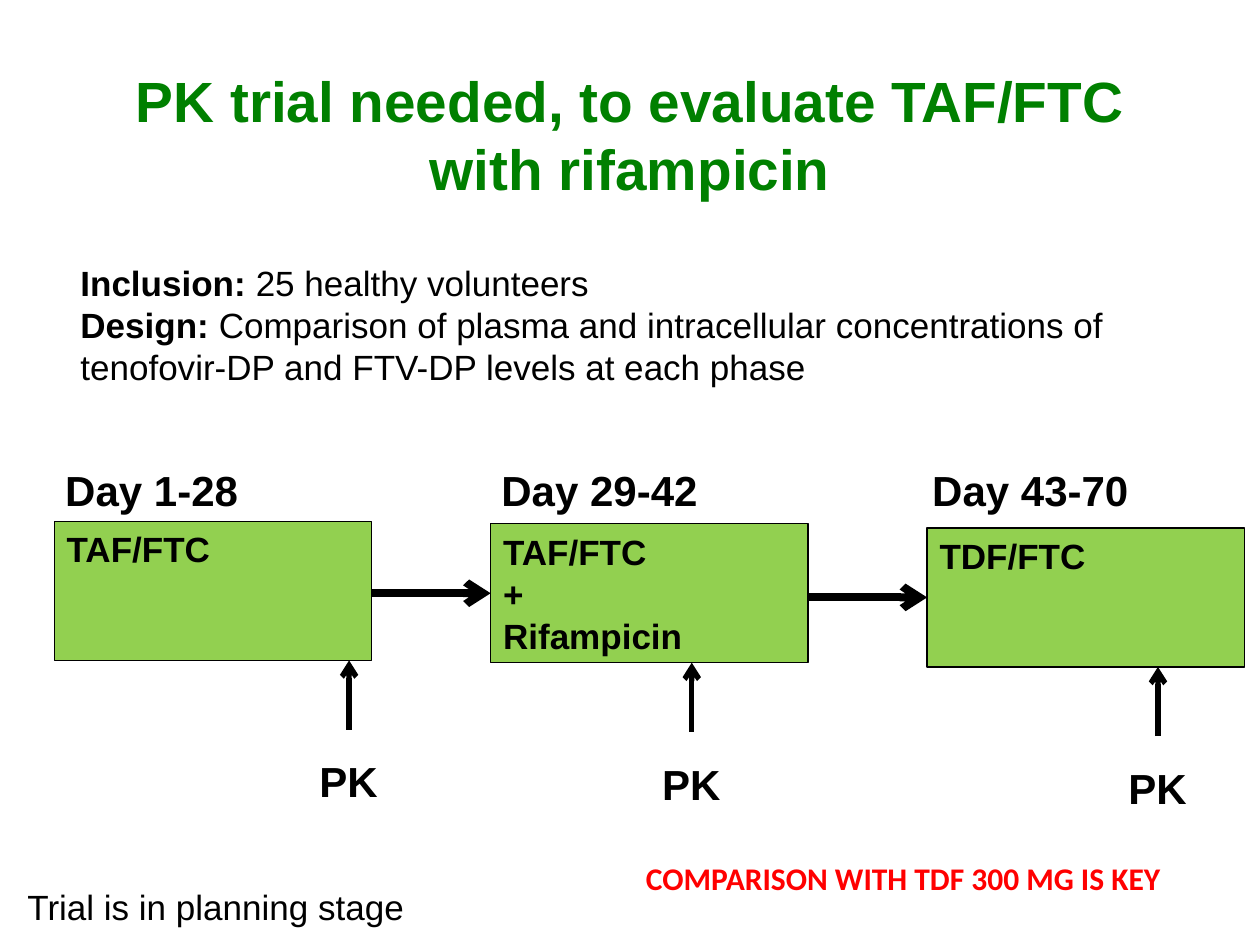
from pptx import Presentation
from pptx.dml.color import RGBColor
from pptx.enum.shapes import MSO_CONNECTOR, MSO_SHAPE
from pptx.enum.text import MSO_ANCHOR, PP_ALIGN
from pptx.oxml.ns import qn
from pptx.util import Pt
from lxml import etree

BLACK = RGBColor(0x00, 0x00, 0x00)
TITLE_GREEN = RGBColor(0x00, 0x80, 0x00)
BOX_GREEN = RGBColor(0x92, 0xD0, 0x50)
RED = RGBColor(0xFF, 0x00, 0x00)
LEFT, CENTER = PP_ALIGN.LEFT, PP_ALIGN.CENTER
TOP, MIDDLE = MSO_ANCHOR.TOP, MSO_ANCHOR.MIDDLE
RECT, STRAIGHT = MSO_SHAPE.RECTANGLE, MSO_CONNECTOR.STRAIGHT

# Phases: day label, label left, box top, treatment lines, PK sampling x
PHASES = [
    ("Day 1-28", 30.2, 298, ["TAF/FTC"], 199.5),
    ("Day 29-42", 279.4, 299.3, ["TAF/FTC", "+", "Rifampicin"], 395.3),
    ("Day 43-70", 525.6, 301.7, ["TDF/FTC"], 661.7),
]
BOX_W, BOX_H, PITCH = 181.4, 79.4, 249.4


def write(sp, paragraphs, size=20, font="Arial", color=BLACK, bold=False,
          align=LEFT, anchor=TOP, wrap=True):
    """Fill a shape; a paragraph is a string or a list of (text, bold) runs."""
    tf = sp.text_frame
    tf.word_wrap = wrap
    tf.vertical_anchor = anchor
    for i, runs in enumerate(paragraphs):
        p = tf.paragraphs[0] if i == 0 else tf.add_paragraph()
        p.alignment = align
        for text, is_bold in [(runs, bold)] if isinstance(runs, str) else runs:
            r = p.add_run()
            r.text = text
            r.font.size, r.font.name = Pt(size), font
            r.font.bold = is_bold
            r.font.color.rgb = color


def add_text(s, box, paragraphs, **fmt):
    sp = s.shapes.add_textbox(*map(Pt, box))
    write(sp, paragraphs, **fmt)


def add_arrow(s, x1, y1, x2, y2, width):
    cn = s.shapes.add_connector(STRAIGHT, Pt(x1), Pt(y1), Pt(x2), Pt(y2))
    cn.line.color.rgb = BLACK
    cn.line.width = Pt(width)
    etree.SubElement(cn.line._get_or_add_ln(), qn("a:tailEnd"), type="arrow")
    etree.SubElement(cn._element.spPr, qn("a:effectLst"))


def add_phase(s, box, day, day_left, drugs, pk_x):
    x, y, w, h = box
    # Treatment box under its day label
    sp = s.shapes.add_shape(RECT, *map(Pt, box))
    sp.shadow.inherit = False
    sp.fill.solid()
    sp.fill.fore_color.rgb = BOX_GREEN
    sp.line.color.rgb = BLACK
    sp.line.width = Pt(0.75)
    write(sp, drugs, bold=True)
    add_text(s, (day_left, 262, 178.6, 36), [day], size=24, bold=True)
    # PK sampling point
    bottom = y + h
    add_arrow(s, pk_x, bottom + 39.6, pk_x, bottom, 3)
    add_text(s, (pk_x - 24, bottom + 51, 48.2, 36), ["PK"],
             size=24, bold=True, wrap=False)


def add_timeline(s, left):
    for i, (day, day_left, top, drugs, pk_x) in enumerate(PHASES):
        x = left + i * PITCH
        add_phase(s, (x, top, BOX_W, BOX_H), day, day_left, drugs, pk_x)
        if i < len(PHASES) - 1:
            y = PHASES[i + 1][2] + BOX_H / 2
            add_arrow(s, x + BOX_W, y, x + PITCH, y, 4.5)


def main():
    prs = Presentation()
    prs.slide_width, prs.slide_height = Pt(720), Pt(540)
    s = prs.slides.add_slide(prs.slide_layouts[6])

    # Title
    add_text(s, (54, 31.7, 612, 90),
             ["PK trial needed, to evaluate TAF/FTC with rifampicin"],
             size=32.4, color=TITLE_GREEN, bold=True, align=CENTER,
             anchor=MIDDLE)

    # Trial outline
    add_text(s, (38.9, 146, 609, 80), [
        [("Inclusion: ", True), ("25 healthy volunteers", False)],
        [("Design: ", True),
         ("Comparison of plasma and intracellular concentrations of", False)],
        "tenofovir-DP and FTV-DP levels at each phase",
    ], wrap=False)

    add_timeline(s, 31)

    # Closing remarks
    add_text(s, (8.6, 502.6, 237, 31.5), ["Trial is in planning stage"],
             wrap=False)
    add_text(s, (362, 487.4, 312, 29), ["COMPARISON WITH TDF 300 MG IS KEY"],
             size=18, font="Calibri", color=RED, bold=True, wrap=False)

    prs.save("out.pptx")


if __name__ == "__main__":
    main()
